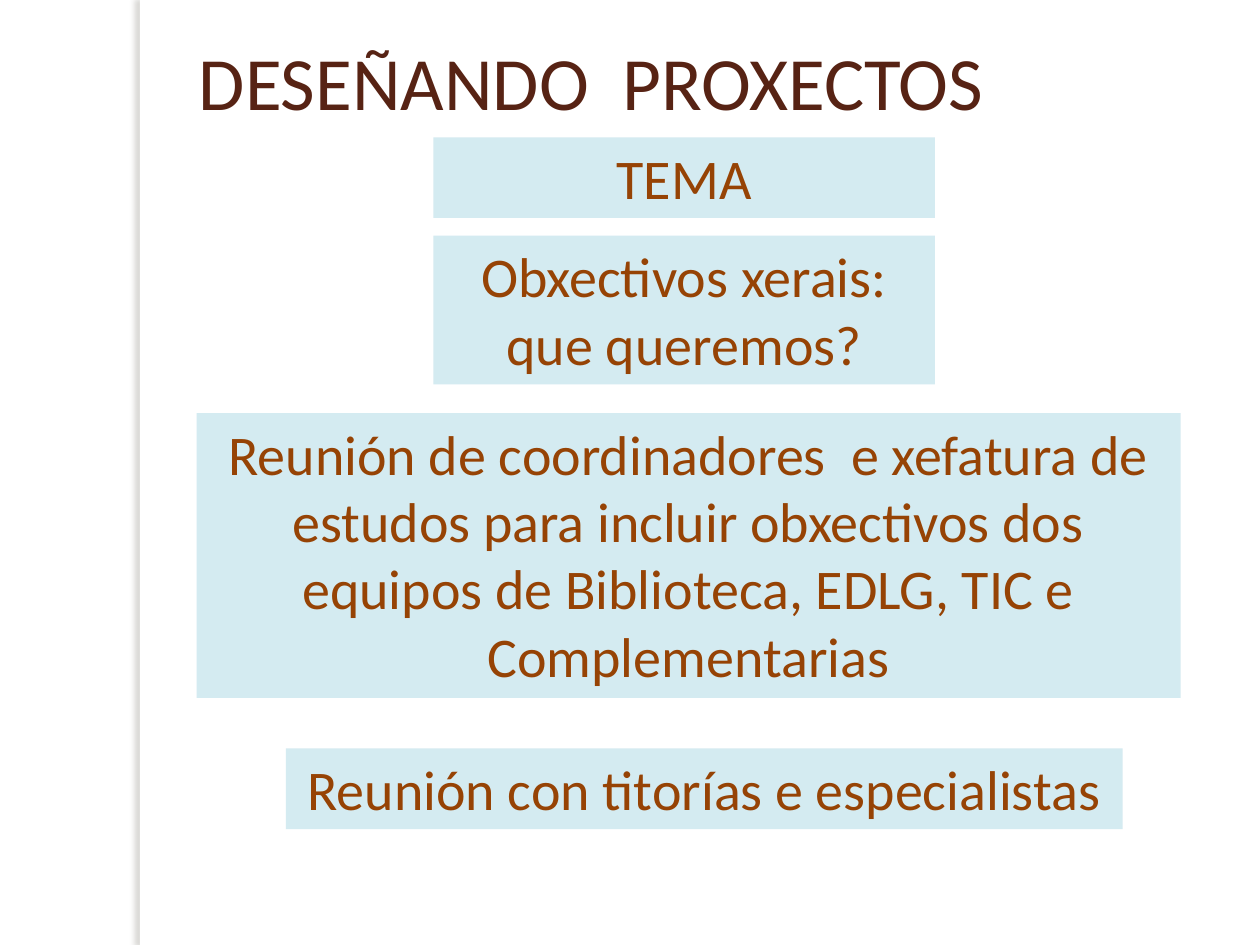
from dataclasses import dataclass

from lxml.etree import SubElement
from pptx import Presentation
from pptx.dml.color import RGBColor
from pptx.enum.shapes import MSO_SHAPE
from pptx.enum.text import MSO_ANCHOR, MSO_AUTO_SIZE, PP_ALIGN
from pptx.oxml.ns import qn
from pptx.util import Inches, Pt


@dataclass(frozen=True)
class Theme:
    font: str = "Calibri"
    paper: str = "FFFFFF"
    title: str = "572314"
    step: str = "964305"
    panel: str = "D4EBF1"
    shade: str = "736F63"
    title_size: int = 43
    step_size: int = 32


@dataclass(frozen=True)
class Box:
    column: float
    row: float
    columns: float
    rows: float

    def inner(self, column, row, columns, rows):
        return Box(self.column + column, self.row + row, columns, rows)

    def lengths(self):
        return [Inches(cells * CELL)
                for cells in (self.column, self.row, self.columns, self.rows)]


THEME = Theme()
CELL = 0.1
PAGE = Box(0, 0, 100, 75)
STEPS = [
    ("TEMA", (18.8, 0, 39.8, 6.4)),
    ("Obxectivos xerais: que queremos?", (18.8, 7.8, 39.8, 11.8)),
    ("Reunión de coordinadores  e xefatura de estudos para incluir obxectivos "
     "dos equipos de Biblioteca, EDLG, TIC e Complementarias",
     (0, 21.9, 78.1, 22.6)),
    ("Reunión con titorías e especialistas", (7.1, 48.5, 66.4, 6.4)),
]


def apply(target, values):
    for name, value in values.items():
        setattr(target, name, value)


def write(frame, words, color, size, align, fit):
    apply(frame, {"word_wrap": True, "auto_size": fit,
                  "vertical_anchor": MSO_ANCHOR.TOP})
    paragraph = frame.paragraphs[0]
    paragraph.alignment = align
    run = paragraph.add_run()
    run.text = words
    apply(run.font, {"name": THEME.font, "size": Pt(size)})
    run.font.color.rgb = RGBColor.from_string(color)


def add_panel(slide, box, color):
    panel = slide.shapes.add_shape(MSO_SHAPE.RECTANGLE, *box.lengths())
    panel.shadow.inherit = False
    panel.fill.solid()
    panel.fill.fore_color.rgb = RGBColor.from_string(color)
    panel.line.fill.background()
    return panel


def add_side_edge(slide, box):
    edge = add_panel(slide, box, THEME.paper)
    effects = edge._element.spPr.find(qn("a:effectLst"))
    shadow = SubElement(effects, qn("a:outerShdw"), blurRad=str(Pt(3)),
                        dist=str(Pt(3)), dir="10800000", algn="tl",
                        rotWithShape="0")
    tint = SubElement(shadow, qn("a:srgbClr"), val=THEME.shade)
    SubElement(tint, qn("a:alpha"), val="25000")


def add_heading(slide, box):
    heading = slide.shapes.add_textbox(*box.lengths())
    write(heading.text_frame, "DESEÑANDO  PROXECTOS", THEME.title,
          THEME.title_size, PP_ALIGN.LEFT, MSO_AUTO_SIZE.NONE)


def add_steps(slide, box):
    for words, place in STEPS:
        step = add_panel(slide, box.inner(*place), THEME.panel)
        write(step.text_frame, words, THEME.step, THEME.step_size,
              PP_ALIGN.CENTER, MSO_AUTO_SIZE.SHAPE_TO_FIT_TEXT)


def main():
    deck = Presentation()
    apply(deck, {"slide_width": Inches(PAGE.columns * CELL),
                 "slide_height": Inches(PAGE.rows * CELL)})
    slide = deck.slides.add_slide(deck.slide_layouts[6])
    slide.background.fill.solid()
    slide.background.fill.fore_color.rgb = RGBColor.from_string(THEME.paper)
    add_side_edge(slide, PAGE.inner(11.1, 0, 0.8, PAGE.rows))
    add_heading(slide, PAGE.inner(14.8, 2.3, 81, 10.6))
    add_steps(slide, PAGE.inner(15.6, 10.9, 78.1, 54.9))
    deck.save("out.pptx")


if __name__ == "__main__":
    main()
